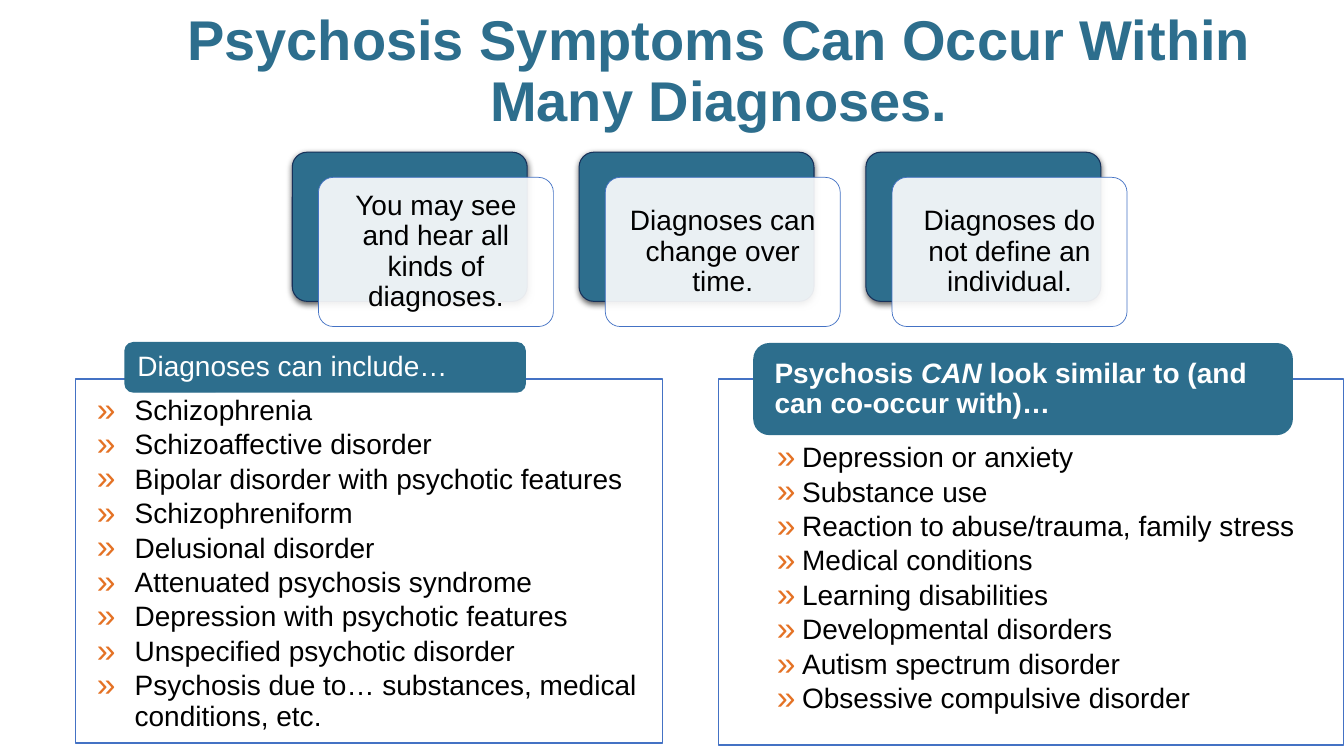
import pptx
import pptx.util
import pptx.dml.color
import pptx.enum.shapes
import pptx.enum.text
import pptx.oxml
import pptx.oxml.ns
from dataclasses import dataclass
from typing import Any

Pt = pptx.util.Pt
Align = pptx.enum.text.PP_ALIGN
Anchor = pptx.enum.text.MSO_ANCHOR
HUES = {"teal": "2D6E8D", "navy": "17315A", "blue": "4472C4",
        "orange": "E47225", "white": "FFFFFF", "black": "000000"}
WIDE = pptx.util.Inches(13.33)
HIGH = pptx.util.Inches(7.5)


@dataclass(frozen=True)
class Box:
    """Left, top, width and height in percent of the slide."""
    left: float
    top: float
    width: float
    height: float

    def shift(self, across: float, down: float = 0) -> "Box":
        return Box(self.left + across, self.top + down, self.width, self.height)


@dataclass(frozen=True)
class Panel:
    box: Box
    inset: tuple[float, float, float, float]
    margin: float
    hang: float
    items: tuple[str, ...]


@dataclass(frozen=True)
class Header:
    box: Box
    inset: tuple[float, float, float, float]
    bold: bool
    runs: tuple[tuple[str, bool], ...]


TITLE = Box(10.35, 0, 86.25, 19.33)
CARD = Box(21.75, 20.13, 17.48, 19.73)
PITCH = 21.34
CARDS = ("You may see and hear all kinds of diagnoses.",
         "Diagnoses can change over time.",
         "Diagnoses do not define an individual.")
PANELS = (
    Panel(Box(5.63, 50.13, 43.65, 48.13), (15.1, 12.2, 7.9, 0), 27, 27, (
        "Schizophrenia", "Schizoaffective disorder",
        "Bipolar disorder with psychotic features", "Schizophreniform",
        "Delusional disorder", "Attenuated psychosis syndrome",
        "Depression with psychotic features", "Unspecified psychotic disorder",
        "Psychosis due to… substances, medical conditions, etc.")),
    Panel(Box(53.48, 50.13, 46.5, 48.4), (34.5, 46, 32, 11.5), 25, 18, (
        "Depression or anxiety", "Substance use",
        "Reaction to abuse/trauma, family stress", "Medical conditions",
        "Learning disabilities", "Developmental disorders",
        "Autism spectrum disorder", "Obsessive compulsive disorder")),
)
HEADERS = (
    Header(Box(9.3, 45.33, 29.78, 6.53), (7.2, 3.6, 7.2, 3.6), False,
           (("Diagnoses can include…", False),)),
    Header(Box(56.1, 45.47, 40.05, 12), (11.5, 0, 11.5, 0), True,
           (("Psychosis ", False), ("CAN", True),
            (" look similar to (and can co-occur with)…", False))),
)


def style(target: Any, looks: dict[str, Any]) -> None:
    for name, value in looks.items():
        setattr(target, name, value)


def tint(name: str) -> Any:
    return pptx.dml.color.RGBColor.from_string(HUES[name])


def node(tag: str, body: str) -> Any:
    return pptx.oxml.parse_xml(
        f'<a:{tag} {pptx.oxml.ns.nsdecls("a")} {body}')


def place(shape: Any, box: Box) -> None:
    style(shape, {"left": round(WIDE * box.left / 100),
                  "top": round(HIGH * box.top / 100),
                  "width": round(WIDE * box.width / 100),
                  "height": round(HIGH * box.height / 100)})


def paint(shape: Any, fill: str, line: str, width: float,
          sheer: bool = False) -> None:
    shape.fill.solid()
    shape.fill.fore_color.rgb = tint(fill)
    shape.line.color.rgb = tint(line)
    shape.line.width = Pt(width)
    if sheer:
        solid = shape._element.spPr.find(pptx.oxml.ns.qn("a:solidFill"))
        solid[0].append(node("alpha", 'val="90000"/>'))


def frame(shape: Any, inset: tuple[float, ...], anchor: Any) -> Any:
    left, top, right, base = map(Pt, inset)
    text = shape.text_frame
    style(text, {"margin_left": left, "margin_top": top,
                 "margin_right": right, "margin_bottom": base,
                 "vertical_anchor": anchor, "word_wrap": True,
                 "auto_size": pptx.enum.text.MSO_AUTO_SIZE.NONE})
    return text


def font(target: Any, size: float, hue: str, bold: bool = False,
         slant: bool = False) -> None:
    style(target, {"name": "Arial", "size": Pt(size), "bold": bold,
                   "italic": slant})
    target.color.rgb = tint(hue)


def para(line: Any, align: Any, after: float = 0) -> None:
    style(line, {"alignment": align, "line_spacing": 0.9,
                 "space_before": Pt(0), "space_after": Pt(after)})


def block(slide: Any, box: Box, curve: float) -> Any:
    shape = slide.shapes.add_shape(
        pptx.enum.shapes.MSO_SHAPE.ROUNDED_RECTANGLE, 0, 0, 0, 0)
    place(shape, box)
    shape.adjustments[0] = curve
    shape.shadow.inherit = False
    return shape


def draw_title(slide: Any) -> None:
    title = slide.shapes.title
    place(title, TITLE)
    text = frame(title, (7.2, 3.6, 7.2, 3.6), Anchor.MIDDLE)
    text.text = "Psychosis Symptoms Can Occur Within Many Diagnoses."
    para(text.paragraphs[0], Align.CENTER)
    font(text.paragraphs[0].runs[0].font, 40, "teal", True)


def draw_card(slide: Any, box: Box, words: str) -> None:
    back = block(slide, box, 0.1)
    paint(back, "teal", "navy", 0.75)
    back._element.spPr.find(pptx.oxml.ns.qn("a:effectLst")).append(node(
        "outerShdw", 'blurRad="57150" dist="19050" dir="5400000" '
        'algn="ctr" rotWithShape="0"><a:srgbClr val="000000">'
        '<a:alpha val="63000"/></a:srgbClr></a:outerShdw>'))
    front = block(slide, box.shift(1.95, 3.33), 0.1)
    paint(front, "white", "blue", 0.5, True)
    text = frame(front, (5.8,) * 4, Anchor.MIDDLE)
    text.text = words
    para(text.paragraphs[0], Align.CENTER)
    font(text.paragraphs[0].runs[0].font, 20, "black")


def draw_panel(shape: Any, panel: Panel) -> None:
    place(shape, panel.box)
    paint(shape, "white", "blue", 1, True)
    text = frame(shape, panel.inset, Anchor.TOP)
    text.text = "\n".join(panel.items)
    for line in text.paragraphs:
        para(line, Align.LEFT, 3)
        line.level = 1
        props = line._p.get_or_add_pPr()
        props.set("marL", str(Pt(panel.margin)))
        props.set("indent", str(-Pt(panel.hang)))
        props.append(node("buClr", f'><a:srgbClr val="{HUES["orange"]}"/></a:buClr>'))
        props.append(node("buSzPct", 'val="120000"/>'))
        props.append(node("buFont", 'typeface="Arial"/>'))
        props.append(node("buChar", 'char="»"/>'))
        font(line.runs[0].font, 20, "black")


def draw_header(slide: Any, header: Header) -> None:
    shape = block(slide, header.box, 0.17)
    paint(shape, "teal", "teal", 1)
    line = frame(shape, header.inset, Anchor.MIDDLE).paragraphs[0]
    para(line, Align.LEFT)
    for words, slant in header.runs:
        run = line.add_run()
        run.text = words
        font(run.font, 20, "white", header.bold, slant)


def main() -> None:
    deck = pptx.Presentation()
    style(deck, {"slide_width": WIDE, "slide_height": HIGH})
    slide = deck.slides.add_slide(deck.slide_layouts[3])
    draw_title(slide)
    for step, words in enumerate(CARDS):
        draw_card(slide, CARD.shift(step * PITCH), words)
    for spot, panel in enumerate(PANELS, 1):
        draw_panel(slide.placeholders[spot], panel)
    for header in HEADERS:
        draw_header(slide, header)
    deck.save("out.pptx")


if __name__ == "__main__":
    main()
